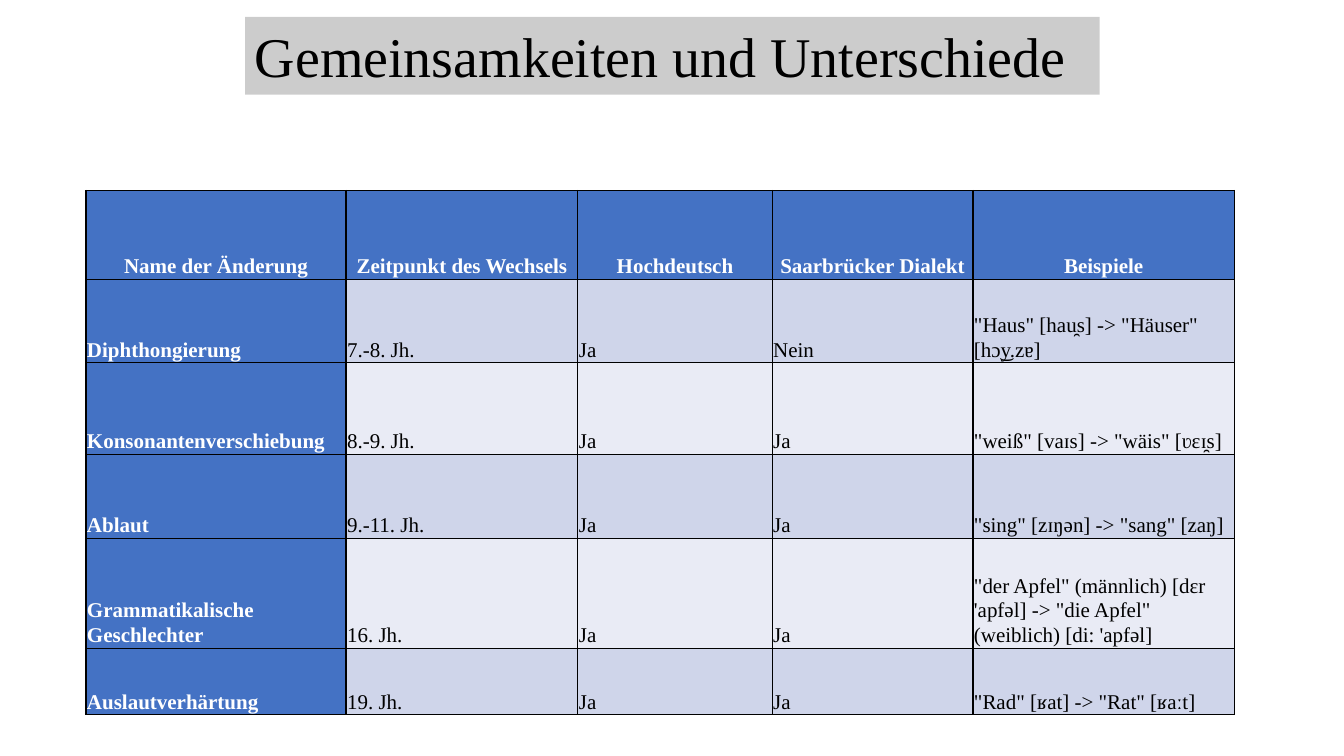
from dataclasses import dataclass

from lxml import etree
from pptx import Presentation
from pptx import util as u
from pptx.dml import color
from pptx.enum import shapes, text
from pptx.oxml import ns

FONT = "Times New Roman"
BLACK, WHITE, BLUE = "000000", "FFFFFF", "4472C4"
BANDS = ("CFD5EA", "E9EBF5")
COLUMN_WIDTHS = (185.8, 165.6, 138.8, 143.4, 187)
HEADER_HEIGHT = 63.4
HEADERS = ("Name der Änderung", "Zeitpunkt des Wechsels", "Hochdeutsch",
           "Saarbrücker Dialekt", "Beispiele")


@dataclass
class SoundChange:
    height: float
    name: str
    period: str
    standard: str
    dialect: str
    examples: str

    def texts(self) -> tuple[str, ...]:
        return self.name, self.period, self.standard, self.dialect, self.examples


CHANGES = [
    SoundChange(59.8, "Diphthongierung", "7.-8. Jh.", "Ja", "Nein",
                '"Haus" [hau̯s] -> "Häuser" [hɔ͜y.zɐ]'),
    SoundChange(65.5, "Konsonantenverschiebung", "8.-9. Jh.", "Ja", "Ja",
                '"weiß" [vaɪs] -> "wäis" [ʋɛɪ̯s]'),
    SoundChange(59.8, "Ablaut", "9.-11. Jh.", "Ja", "Ja",
                '"sing" [zɪŋən] -> "sang" [zaŋ]'),
    SoundChange(78.5, "Grammatikalische Geschlechter", "16. Jh.", "Ja", "Ja",
                '"der Apfel" (männlich) [dɛr \'apfəl] -> "die Apfel" (weiblich) [di: \'apfəl]'),
    SoundChange(47.5, "Auslautverhärtung", "19. Jh.", "Ja", "Ja",
                '"Rad" [ʁat] -> "Rat" [ʁaːt]'),
]


def rgb(value: str) -> color.RGBColor:
    return color.RGBColor.from_string(value)


def write(tf, content: str, *, size: float, fill: str = BLACK, bold: bool = False,
          align=text.PP_ALIGN.LEFT, spacing: float = 1.0) -> None:
    p = tf.paragraphs[0]
    p.alignment = align
    p.line_spacing = spacing
    r = p.add_run()
    r.text = content
    r.font.name = FONT
    r.font.size = u.Pt(size)
    r.font.bold = bold
    r.font.color.rgb = rgb(fill)


def add_borders(cell) -> None:
    tc_pr = cell._tc.get_or_add_tcPr()
    for i, side in enumerate(("lnL", "lnR", "lnT", "lnB")):
        ln = etree.Element(ns.qn(f"a:{side}"), w=str(u.Pt(1)))
        fill = etree.SubElement(ln, ns.qn("a:solidFill"))
        etree.SubElement(fill, ns.qn("a:srgbClr"), val=BLACK)
        tc_pr.insert(i, ln)


def fill_cell(cell, content: str, *, fill: str, strong: bool, align) -> None:
    cell.fill.solid()
    cell.fill.fore_color.rgb = rgb(fill)
    cell.vertical_anchor = text.MSO_ANCHOR.BOTTOM
    cell.margin_left = cell.margin_right = u.Pt(0.75)
    cell.margin_top = cell.margin_bottom = u.Pt(0.75)
    write(cell.text_frame, content, size=15, fill=WHITE if strong else BLACK,
          bold=strong, align=align, spacing=1.07)
    add_borders(cell)


def add_changes_table(s) -> None:
    rows = [HEADERS] + [change.texts() for change in CHANGES]
    heights = [HEADER_HEIGHT] + [change.height for change in CHANGES]
    frame = s.shapes.add_table(len(rows), len(HEADERS), u.Pt(61.4), u.Pt(136),
                               u.Pt(sum(COLUMN_WIDTHS)), u.Pt(sum(heights)))
    table = frame.table
    table.first_col = True
    for column, width in zip(table.columns, COLUMN_WIDTHS):
        column.width = u.Pt(width)
    for i, (row, height) in enumerate(zip(rows, heights)):
        table.rows[i].height = u.Pt(height)
        align = text.PP_ALIGN.LEFT if i else text.PP_ALIGN.CENTER
        for j, content in enumerate(row):
            strong = i == 0 or j == 0
            fill = BLUE if strong else BANDS[(i - 1) % 2]
            fill_cell(table.cell(i, j), content, fill=fill, strong=strong, align=align)


def add_title(s) -> None:
    sp = s.shapes.add_shape(shapes.MSO_SHAPE.RECTANGLE, u.Pt(175), u.Pt(12),
                            u.Pt(610.5), u.Pt(55.7))
    sp.shadow.inherit = False
    sp.line.fill.background()
    sp.fill.solid()
    sp.fill.fore_color.rgb = rgb(BLACK)
    clr = sp._element.spPr.find(f".//{ns.qn('a:srgbClr')}")
    etree.SubElement(clr, ns.qn("a:alpha"), val="20000")
    tf = sp.text_frame
    tf.word_wrap = True
    tf.vertical_anchor = text.MSO_ANCHOR.TOP
    write(tf, "Gemeinsamkeiten und Unterschiede", size=40)


def main() -> None:
    prs = Presentation()
    prs.slide_width, prs.slide_height = u.Pt(960), u.Pt(540)
    s = prs.slides.add_slide(prs.slide_layouts[6])
    add_changes_table(s)
    add_title(s)
    prs.save("out.pptx")


if __name__ == "__main__":
    main()
